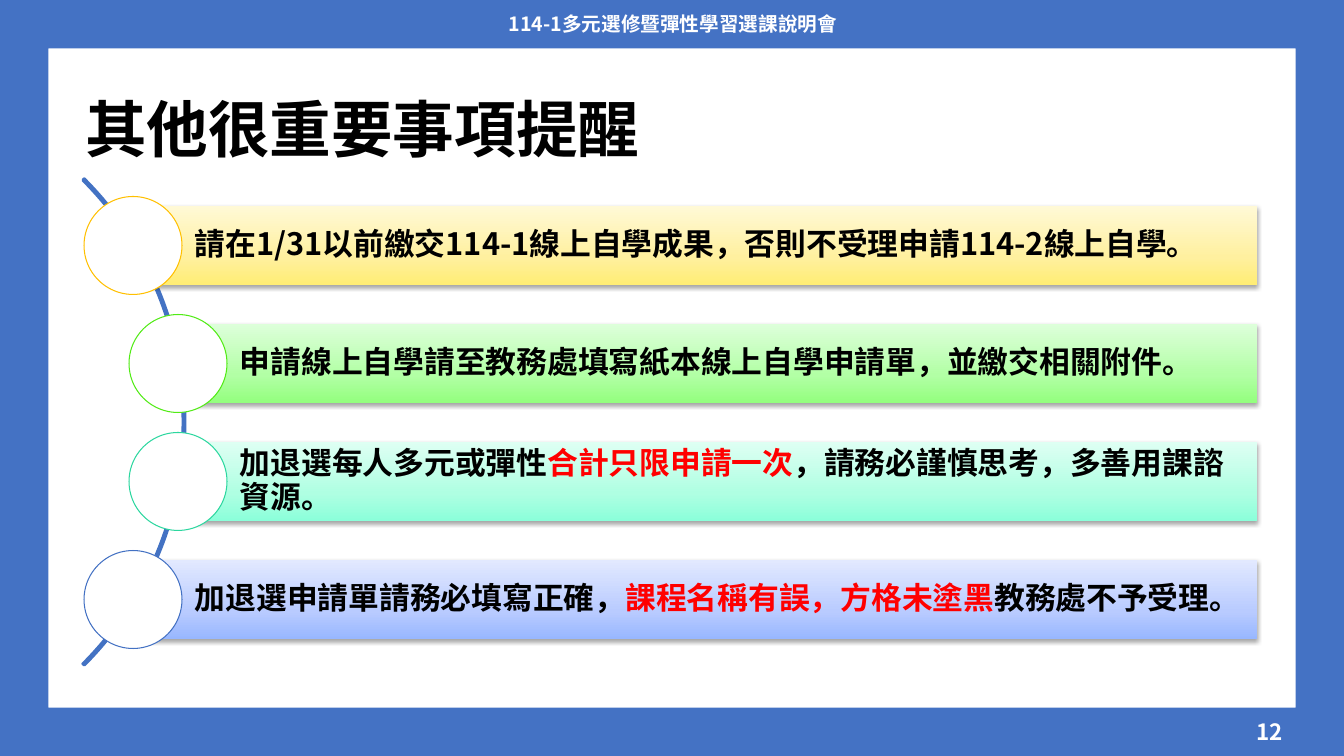
from copy import deepcopy
from dataclasses import dataclass

from lxml.etree import SubElement
from pptx import Presentation
from pptx.dml.color import RGBColor
from pptx.enum.shapes import MSO_SHAPE as SHAPE
from pptx.enum.text import MSO_ANCHOR as ANCHOR, PP_ALIGN as ALIGN
from pptx.oxml.ns import qn
from pptx.util import Emu, Pt

HEAD = "114-1多元選修暨彈性學習選課說明會"
TITLE = "其他很重要事項提醒"
PAGE = "12"

# Each item: indent level, ring colour, gradient from bottom to top,
# then text runs, every second one stressed.
ITEMS = [
    (0, "FFC000", ("FFED74", "FFF09F", "FFF9D6"),
     ["請在1/31以前繳交114-1線上自學成果，否則不受理申請114-2線上自學。"]),
    (1, "51EB15", ("93FF7E", "B2FFA5", "DDFFDA"),
     ["申請線上自學請至教務處填寫紙本線上自學申請單，並繳交相關附件。"]),
    (1, "2CD79F", ("8BFFDA", "AFFFE2", "DEFFF3"),
     ["加退選每人多元或彈性", "合計只限申請一次", "，請務必謹慎思考，多善用課諮資源。"]),
    (0, "4371C3", ("98B7FF", "B9CBFF", "E2E9FF"),
     ["加退選申請單請務必填寫正確，", "課程名稱有誤，方格未塗黑", "教務處不予受理。"]),
]


@dataclass(frozen=True)
class Theme:
    font: str = "Noto Sans CJK TC"
    ink: str = "000000"
    paper: str = "FFFFFF"
    stress: str = "FF0000"
    frame: str = "4472C4"
    arc: str = "4372C3"
    title: int = 44
    item: int = 22
    page: int = 16
    head: int = 14


THEME = Theme()
STOPS = (0, 0.35, 1)
WIDE, HIGH = 1344, 756
BAR_X, INDENT, BAR_END = 133, 45, 1257
BAR_Y, BAR_H, STEP = 206, 79, 118
RING = 98
ARC = 688


def px(n):
    return Emu(round(n * 914400 / 100.8))


def rgb(code):
    return RGBColor.from_string(code)


def write(shape, runs, size, align=ALIGN.LEFT, pads=(10, 5, 10, 5), space=None):
    """Fill a shape with bold (text, colour) runs in one paragraph."""
    frame = shape.text_frame
    frame.word_wrap = True
    frame.vertical_anchor = ANCHOR.MIDDLE
    (frame.margin_left, frame.margin_top,
     frame.margin_right, frame.margin_bottom) = map(px, pads)
    para = frame.paragraphs[0]
    para.alignment = align
    if space:
        para.line_spacing = space
    for text, color in runs:
        run = para.add_run()
        run.text = text
        font = run.font
        font.size, font.bold, font.name = Pt(size), True, THEME.font
        font.color.rgb = rgb(color)
        SubElement(run._r.rPr, qn("a:ea"), typeface=THEME.font)


def label(slide, box, text, color, size, **opts):
    write(slide.shapes.add_textbox(*map(px, box)), [(text, color)], size, **opts)


def draw(slide, kind, box, fill=None, line=None, width=1):
    shape = slide.shapes.add_shape(kind, *map(px, box))
    if fill:
        shape.fill.solid()
        shape.fill.fore_color.rgb = rgb(fill)
    else:
        shape.fill.background()
    if line:
        shape.line.color.rgb = rgb(line)
        shape.line.width = Pt(width)
    else:
        shape.line.fill.background()
    shape.shadow.inherit = False
    return shape


def blend(shape, colors):
    shape.fill.gradient()
    shape.fill.gradient_angle = 90
    first = shape._element.xpath(".//a:gs")[0]
    first.addnext(deepcopy(first))
    for stop, place, color in zip(shape.fill.gradient_stops, STOPS, colors):
        stop.position = place
        stop.color.rgb = rgb(color)


def shade(shape):
    """Add a soft shadow below the shape."""
    effect = shape._element.spPr.find(qn("a:effectLst"))
    cast = SubElement(effect, qn("a:outerShdw"), blurRad="40000",
                      dist="20000", dir="5400000", rotWithShape="0")
    color = SubElement(cast, qn("a:srgbClr"), val=THEME.ink)
    SubElement(color, qn("a:alpha"), val="35000")


def add_item(slide, row, level, ring, colors, texts):
    left, top = BAR_X + level * INDENT, BAR_Y + row * STEP
    bar = draw(slide, SHAPE.RECTANGLE, (left, top, BAR_END - left, BAR_H))
    blend(bar, colors)
    shade(bar)
    inks = (THEME.ink, THEME.stress, THEME.ink)
    write(bar, zip(texts, inks), THEME.item, pads=(62, 6, 6, 6), space=0.9)
    box = (left - RING / 2, top + (BAR_H - RING) / 2, RING, RING)
    draw(slide, SHAPE.OVAL, box, THEME.paper, ring, 0.75)


def main():
    deck = Presentation()
    deck.slide_width, deck.slide_height = px(WIDE), px(HIGH)
    slide = deck.slides.add_slide(deck.slide_layouts[6])

    frame = draw(slide, SHAPE.FRAME, (0, 0, WIDE, HIGH), THEME.frame)
    frame.adjustments[0] = 0.064
    label(slide, (75, 60, 1189, 146), TITLE, THEME.ink, THEME.title, space=0.9)
    label(slide, (446, 4, 454, 40), HEAD, THEME.paper, THEME.head,
          align=ALIGN.CENTER)
    label(slide, (991, 712, 302, 40), PAGE, THEME.paper, THEME.page,
          align=ALIGN.RIGHT)

    arc = draw(slide, SHAPE.BLOCK_ARC, (-503, 78, ARC, ARC),
               line=THEME.arc, width=2)
    for spot, value in enumerate((189, 27, 0.003)):
        arc.adjustments[spot] = value
    for row, item in enumerate(ITEMS):
        add_item(slide, row, *item)

    deck.save("out.pptx")


if __name__ == "__main__":
    main()
